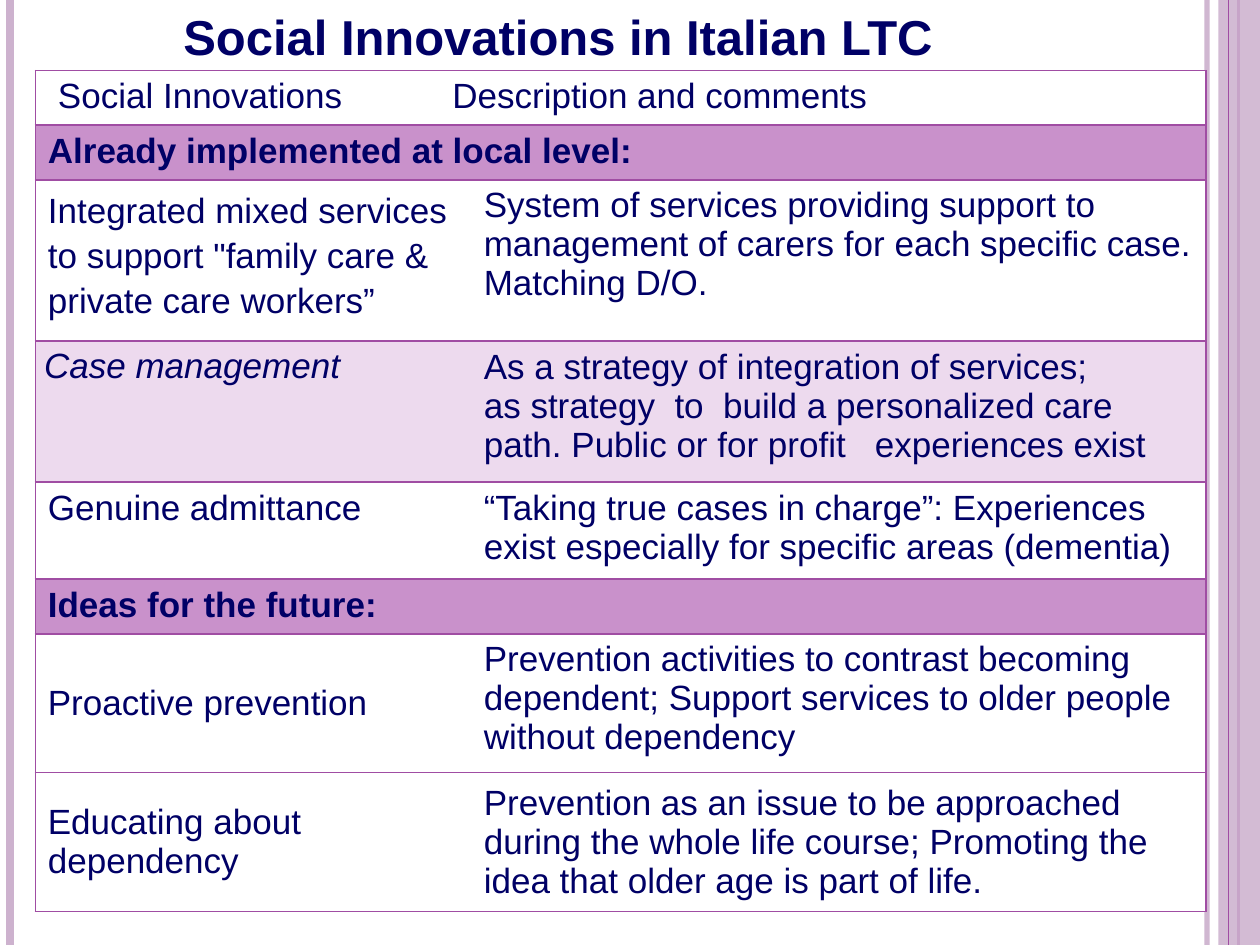
from dataclasses import dataclass

from lxml import etree
from pptx import Presentation
from pptx.dml.color import RGBColor
from pptx.enum.shapes import MSO_CONNECTOR, MSO_SHAPE
from pptx.enum.text import MSO_ANCHOR, PP_ALIGN
from pptx.oxml.ns import qn
from pptx.util import Inches, Pt

STRAIGHT = MSO_CONNECTOR.STRAIGHT
RECTANGLE = MSO_SHAPE.RECTANGLE
TOP, MIDDLE = MSO_ANCHOR.TOP, MSO_ANCHOR.MIDDLE
CENTER = PP_ALIGN.CENTER


@dataclass(frozen=True)
class Theme:
    font: str = "Arial"
    text: str = "000066"
    accent: str = "A04DA3"
    soft: str = "CDB2CE"
    section: str = "C991CB"
    tint: str = "EDDAEE"
    plain: str = "FFFFFF"
    title_size: int = 28
    body_size: int = 20


THEME = Theme()
SLIDE_W, SLIDE_H = 10, 7.5
TITLE = "Social Innovations in Italian LTC"
TABLE_AT = (0.28, 0.56)
COL_WIDTHS = (3.21, 0.25, 5.83)

# Each row: height, fill, and cells as (first column, last column, text, options)
ROWS = [
    (0.43, THEME.plain, [
        (0, 0, "Social Innovations", {"margins": (0.18, 0.05, 0.1, 0.05)}),
        (1, 2, "Description and comments", {}),
    ]),
    (0.43, THEME.section, [
        (0, 2, "Already implemented at local level:", {"bold": True}),
    ]),
    (1.28, THEME.plain, [
        (0, 1, "Integrated mixed services to support \"family care & "
               "private care workers”", {"spacing": 1.15}),
        (2, 2, "System of services providing support to management of carers "
               "for each specific case. Matching D/O.", {}),
    ]),
    (1.12, THEME.tint, [
        (0, 1, "Case management",
         {"italic": True, "spacing": 1.15, "margins": (0.07, 0, 0.07, 0)}),
        (2, 2, "As a strategy of integration of services;\n"
               "as strategy  to  build a personalized care path. "
               "Public or for profit   experiences exist", {}),
    ]),
    (0.77, THEME.plain, [
        (0, 1, "Genuine admittance", {}),
        (2, 2, "“Taking true cases in charge”: Experiences exist especially "
               "for specific areas (dementia)", {}),
    ]),
    (0.43, THEME.section, [
        (0, 1, "Ideas for the future:", {"bold": True}),
        (2, 2, "", {}),
    ]),
    (1.1, THEME.plain, [
        (0, 1, "Proactive prevention", {"anchor": MIDDLE}),
        (2, 2, "Prevention activities to contrast becoming dependent; "
               "Support services to older people without dependency", {}),
    ]),
    (1.1, THEME.plain, [
        (0, 1, "Educating about dependency", {"anchor": MIDDLE}),
        (2, 2, "Prevention as an issue to be approached during the whole life "
               "course; Promoting the idea that older age is part of life.",
         {"anchor": MIDDLE}),
    ]),
]


def rgb(color):
    """Turn a hex colour into an RGBColor."""
    return RGBColor.from_string(color)


def set_alpha(sp, percent):
    """Make the first solid colour of a shape partly transparent."""
    color = sp._element.spPr.find(".//" + qn("a:srgbClr"))
    etree.SubElement(color, qn("a:alpha"), val=str(percent * 1000))


def add_rule(s, x, color, width, alpha=None):
    """Draw a full-height vertical rule."""
    sp = s.shapes.add_connector(
        STRAIGHT, Inches(x), 0, Inches(x), Inches(SLIDE_H))
    sp.line.color.rgb = rgb(color)
    sp.line.width = Pt(width)
    etree.SubElement(sp._element.spPr, qn("a:effectLst"))
    if alpha:
        set_alpha(sp, alpha)


def add_band(s, x):
    """Draw the translucent band that runs to the right edge."""
    sp = s.shapes.add_shape(
        RECTANGLE, Inches(x), 0, Inches(SLIDE_W - x), Inches(SLIDE_H))
    sp.fill.solid()
    sp.fill.fore_color.rgb = rgb(THEME.soft)
    sp.line.fill.background()
    sp.shadow.inherit = False
    set_alpha(sp, 87)


def style_text(tf, size, bold=False, italic=False, spacing=None):
    """Format every paragraph and run of a text frame."""
    for p in tf.paragraphs:
        if spacing:
            p.line_spacing = spacing
        for r in p.runs:
            r.font.name = THEME.font
            r.font.size = Pt(size)
            r.font.bold = bold
            r.font.italic = italic
            r.font.color.rgb = rgb(THEME.text)


def add_title(s):
    """Add the centred slide title."""
    sp = s.shapes.add_textbox(0, 0, Inches(8.86), Inches(0.57))
    tf = sp.text_frame
    tf.word_wrap = True
    tf.text = TITLE
    tf.paragraphs[0].alignment = CENTER
    style_text(tf, THEME.title_size, bold=True)


def set_borders(cell, visible):
    """Draw the named sides of a cell and clear the others."""
    tc_pr = cell._tc.get_or_add_tcPr()
    for side in "LRTB":
        ln = etree.SubElement(tc_pr, qn("a:ln" + side), w=str(Pt(1)))
        if side in visible:
            fill = etree.SubElement(ln, qn("a:solidFill"))
            etree.SubElement(fill, qn("a:srgbClr"), val=THEME.accent)
        else:
            etree.SubElement(ln, qn("a:noFill"))


def fill_cell(cell, text, margins=(0.1, 0.05, 0.1, 0.05), anchor=TOP, **style):
    """Write and format the text of one cell."""
    cell.text = text
    cell.vertical_anchor = anchor
    (cell.margin_left, cell.margin_top,
     cell.margin_right, cell.margin_bottom) = map(Inches, margins)
    style_text(cell.text_frame, THEME.body_size, **style)


def add_table(s):
    """Build the table of innovations."""
    size = (sum(COL_WIDTHS), sum(row[0] for row in ROWS))
    table = s.shapes.add_table(
        len(ROWS), len(COL_WIDTHS), *map(Inches, TABLE_AT + size)).table
    table.first_row = table.horz_banding = False
    for column, width in zip(table.columns, COL_WIDTHS):
        column.width = Inches(width)
    last = len(COL_WIDTHS) - 1
    for i, (height, color, cells) in enumerate(ROWS):
        table.rows[i].height = Inches(height)
        for j in range(last + 1):
            cell = table.cell(i, j)
            set_borders(cell, "TB" + "L" * (j == 0) + "R" * (j == last))
            cell.fill.solid()
            cell.fill.fore_color.rgb = rgb(color)
        for start, end, text, options in cells:
            cell = table.cell(i, start)
            if end > start:
                cell.merge(table.cell(i, end))
                if end == last:
                    edges = cell._tc.tcPr
                    edges.replace(edges.find(qn("a:lnR")), etree.fromstring(
                        etree.tostring(table.cell(i, end)._tc.tcPr.find(qn("a:lnR")))))
            fill_cell(cell, text, **options)


def main():
    """Build and save the slide."""
    prs = Presentation()
    prs.slide_width, prs.slide_height = Inches(SLIDE_W), Inches(SLIDE_H)
    s = prs.slides.add_slide(prs.slide_layouts[6])
    add_rule(s, 9.58, THEME.soft, 3, alpha=93)
    add_rule(s, 0.08, THEME.soft, 4.5)
    add_rule(s, 9.83, THEME.accent, 1.5)
    add_band(s, 9.67)
    add_rule(s, 9.75, THEME.accent, 0.75)
    add_title(s)
    add_table(s)
    prs.save("out.pptx")


if __name__ == "__main__":
    main()
